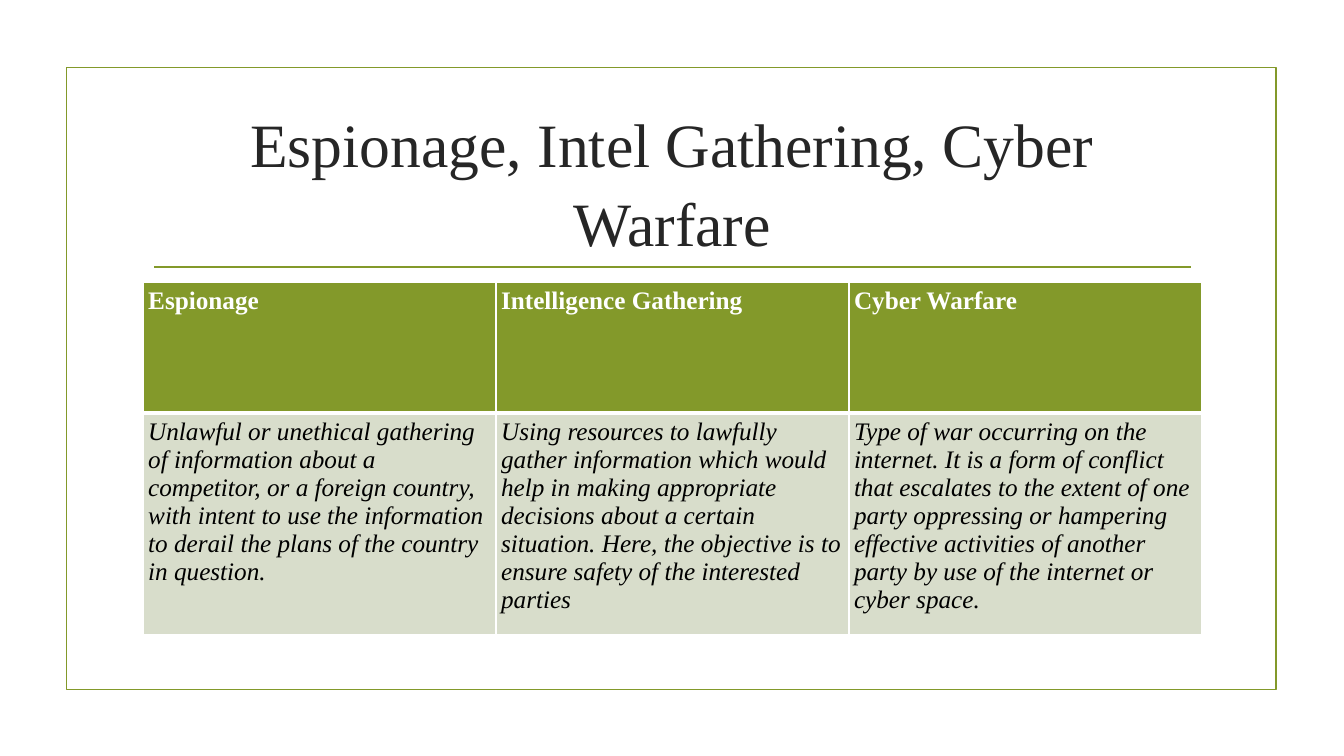
from lxml import etree
from pptx import Presentation
from pptx.dml.color import RGBColor
from pptx.enum import shapes, text
from pptx.oxml import ns
from pptx.util import Inches, Pt

GREEN = RGBColor(0x83, 0x99, 0x2A)
PALE = RGBColor(0xD8, 0xDD, 0xCB)
INK = RGBColor(0x26, 0x26, 0x26)
BLACK = RGBColor(0, 0, 0)
WHITE = RGBColor(255, 255, 255)
FONT = "Times New Roman"
INSET = Inches(0.05)

TITLE = "Espionage, Intel Gathering, Cyber Warfare"
HEADINGS = ["Espionage", "Intelligence Gathering", "Cyber Warfare"]
DEFINITIONS = [
    "Unlawful or unethical gathering of information about a competitor, or a "
    "foreign country, with intent to use the information to derail the plans "
    "of the country in question.",
    "Using resources to lawfully gather information which would help in making "
    "appropriate decisions about a certain situation. Here, the objective is "
    "to ensure safety of the interested parties",
    "Type of war occurring on the internet. It is a form of conflict that "
    "escalates to the extent of one party oppressing or hampering effective "
    "activities of another party by use of the internet or cyber space.",
]


def set_insets(box):
    box.margin_left = box.margin_right = INSET
    box.margin_top = box.margin_bottom = INSET


def set_font(p, size, color, bold=False, italic=False):
    f = p.font
    f.name, f.size, f.bold, f.italic = FONT, Pt(size), bold, italic
    f.color.rgb = color


def add_frame(s, x, y, w, h):
    sp = s.shapes.add_shape(shapes.MSO_SHAPE.RECTANGLE,
                            Inches(x), Inches(y), Inches(w), Inches(h))
    sp.shadow.inherit = False
    sp.fill.background()
    sp.line.color.rgb = GREEN
    sp.line.width = Pt(1.25)


def add_title(s, x, y, w, h):
    sp = s.shapes.add_textbox(Inches(x), Inches(y), Inches(w), Inches(h))
    tf = sp.text_frame
    tf.word_wrap = True
    tf.vertical_anchor = text.MSO_ANCHOR.MIDDLE
    set_insets(tf)
    p = tf.paragraphs[0]
    p.text = TITLE
    p.alignment = text.PP_ALIGN.CENTER
    p.line_spacing = 1.07
    set_font(p, 44, INK)

    rule_y = Inches(y + h + 0.15)
    rule = s.shapes.add_connector(shapes.MSO_CONNECTOR.STRAIGHT,
                                  Inches(x + 0.11), rule_y,
                                  Inches(x + w - 0.11), rule_y)
    rule.line.color.rgb = GREEN
    rule.line.width = Pt(1.25)
    etree.SubElement(rule._element.spPr, ns.qn("a:effectLst"))


def set_borders(cell, widths):
    tcPr = cell._tc.get_or_add_tcPr()
    for i, (side, width) in enumerate(widths.items()):
        ln = etree.Element(ns.qn(f"a:ln{side}"), w=str(Pt(width)))
        fill = etree.SubElement(ln, ns.qn("a:solidFill"))
        etree.SubElement(fill, ns.qn("a:srgbClr"), val=str(WHITE))
        tcPr.insert(i, ln)


def add_definitions(s, x, y, w, row_heights):
    rows = [
        (HEADINGS, GREEN, dict(color=WHITE, bold=True), {"T": 1, "B": 3}),
        (DEFINITIONS, PALE, dict(color=BLACK, italic=True), {"T": 3, "B": 1}),
    ]
    table = s.shapes.add_table(len(rows), len(HEADINGS), Inches(x), Inches(y),
                               Inches(w), Inches(sum(row_heights))).table
    for r, (words, fill, style, edges) in enumerate(rows):
        table.rows[r].height = Inches(row_heights[r])
        for c, word in enumerate(words):
            cell = table.cell(r, c)
            set_insets(cell)
            cell.fill.solid()
            cell.fill.fore_color.rgb = fill
            set_borders(cell, {"L": 1, "R": 1, **edges})
            p = cell.text_frame.paragraphs[0]
            p.text = word
            set_font(p, 18, **style)


def main():
    prs = Presentation()
    prs.slide_width, prs.slide_height = Inches(13.33), Inches(7.5)
    s = prs.slides.add_slide(prs.slide_layouts[6])
    add_frame(s, 0.66, 0.67, 12, 6.17)
    add_title(s, 1.42, 1.07, 10.5, 1.43)
    add_definitions(s, 1.42, 2.8, 10.5, [1.3, 1.3])
    prs.save("out.pptx")


if __name__ == "__main__":
    main()
